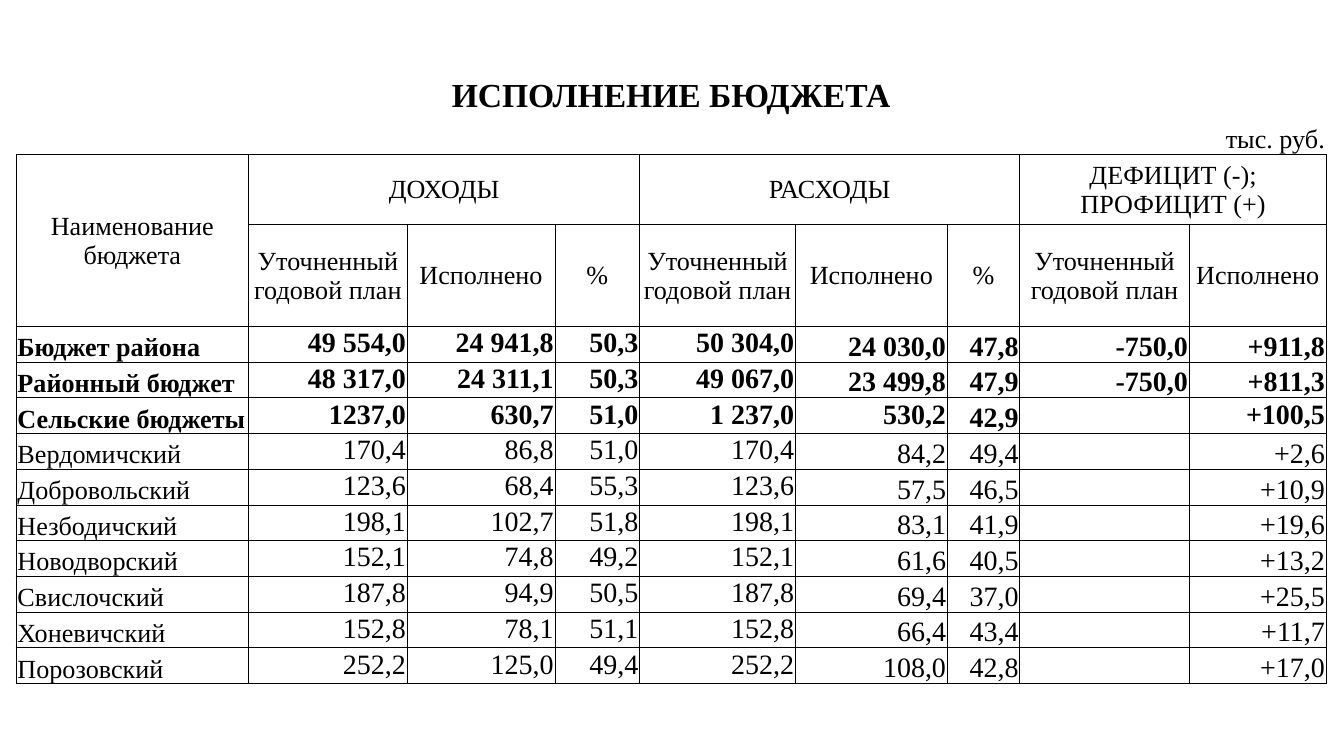
import pptx
import pptx.util
import pptx.dml.color
import pptx.enum.text
import pptx.oxml.ns
import lxml.etree

ALIGN = pptx.enum.text.PP_ALIGN
ANCHOR = pptx.enum.text.MSO_ANCHOR
COLORS = {"ink": "000000"}
FONT = "Times New Roman"
PLAIN_STYLE = "{2D5ABB26-0587-4C30-8999-92F81FD0307C}"

TITLE = "ИСПОЛНЕНИЕ БЮДЖЕТА"
UNITS = "тыс. руб."
NAME_HEADER = "Наименование бюджета"
GROUPS = [(1, 5, "ДОХОДЫ"), (6, 4, "РАСХОДЫ"), (10, 3, "ДЕФИЦИТ (-); ПРОФИЦИТ (+)")]
PLAN, DONE, SHARE = "Уточненный годовой план", "Исполнено", "%"
SUBHEADERS = [PLAN, DONE, SHARE, PLAN, DONE, SHARE, PLAN, DONE]
BUDGETS = [
    ("Бюджет района", "49 554,0", "24 941,8", "50,3", "50 304,0", "24 030,0", "47,8", "-750,0", "+911,8"),
    ("Районный бюджет", "48 317,0", "24 311,1", "50,3", "49 067,0", "23 499,8", "47,9", "-750,0", "+811,3"),
    ("Сельские бюджеты", "1237,0", "630,7", "51,0", "1 237,0", "530,2", "42,9", "", "+100,5"),
    ("Вердомичский", "170,4", "86,8", "51,0", "170,4", "84,2", "49,4", "", "+2,6"),
    ("Добровольский", "123,6", "68,4", "55,3", "123,6", "57,5", "46,5", "", "+10,9"),
    ("Незбодичский", "198,1", "102,7", "51,8", "198,1", "83,1", "41,9", "", "+19,6"),
    ("Новодворский", "152,1", "74,8", "49,2", "152,1", "61,6", "40,5", "", "+13,2"),
    ("Свислочский", "187,8", "94,9", "50,5", "187,8", "69,4", "37,0", "", "+25,5"),
    ("Хоневичский", "152,8", "78,1", "51,1", "152,8", "66,4", "43,4", "", "+11,7"),
    ("Порозовский", "252,2", "125,0", "49,4", "252,2", "108,0", "42,8", "", "+17,0"),
]
SUMMARY_COUNT = 3
RURAL_TOTAL = 2

SLIDE_WIDTH = 10
SLIDE_HEIGHT = SLIDE_WIDTH * 9 / 16
TABLE_LEFT, TABLE_TOP, TABLE_HEIGHT = 0.12, 0.54, 4.55
COLUMN_WIDTHS = [1.73, 1.01, 0.17, 0.73, 0.37, 0.63, 1.16, 0.9, 0.23, 0.54, 1.26, 0.12, 0.9]
HEADER_HEIGHTS = [0.34, 0.27, 0.52, 0.76]
BODY_HEIGHT = (TABLE_HEIGHT - sum(HEADER_HEIGHTS)) / len(BUDGETS)
UNIT_SPANS = [(2, 2), (4, 2), (8, 2), (10, 2)]
BODY_SPANS = [(0, 1), (1, 2), (3, 2), (5, 1), (6, 1), (7, 2), (9, 1), (10, 1), (11, 2)]
INSETS = {"margin_left": 0.01, "margin_top": 0.01, "margin_right": 0.01, "margin_bottom": 0}


def draw_borders(cell, sides):
    properties = cell._tc.get_or_add_tcPr()
    for side in sides:
        line = lxml.etree.SubElement(properties, pptx.oxml.ns.qn(f"a:ln{side}"), w="6350")
        fill = lxml.etree.SubElement(line, pptx.oxml.ns.qn("a:solidFill"))
        lxml.etree.SubElement(fill, pptx.oxml.ns.qn("a:srgbClr"), val=COLORS["ink"])


def prepare(cell, row):
    draw_borders(cell, "" if row == 0 else "B" if row == 1 else "LRTB")
    cell.fill.background()
    for name, inches in INSETS.items():
        setattr(cell, name, pptx.util.Inches(inches))
    para = cell.text_frame.paragraphs[0]
    lxml.etree.SubElement(para._p, pptx.oxml.ns.qn("a:endParaRPr"), sz="1400")


def write(cell, text, size=14, bold=False, align=ALIGN.CENTER, anchor=ANCHOR.MIDDLE):
    cell.vertical_anchor = anchor
    para = cell.text_frame.paragraphs[0]
    para.alignment = align
    span = para.add_run()
    span.text = text
    for name, value in {"name": FONT, "size": pptx.util.Pt(size), "bold": bold}.items():
        setattr(span.font, name, value)
    span.font.color.rgb = pptx.dml.color.RGBColor.from_string(COLORS["ink"])


def merge(table, row, column, width, height=1):
    cell = table.cell(row, column)
    if width * height > 1:
        cell.merge(table.cell(row + height - 1, column + width - 1))
    return cell


def fill_headers(table):
    write(merge(table, 0, 0, len(COLUMN_WIDTHS)), TITLE, size=18, bold=True)
    for column, width in UNIT_SPANS:
        merge(table, 1, column, width)
    write(table.cell(1, len(COLUMN_WIDTHS) - 1), UNITS, align=ALIGN.RIGHT, anchor=ANCHOR.BOTTOM)
    write(merge(table, 2, 0, 1, 2), NAME_HEADER)
    for column, width, text in GROUPS:
        write(merge(table, 2, column, width), text)
    for (column, width), text in zip(BODY_SPANS[1:], SUBHEADERS):
        write(merge(table, 3, column, width), text)


def fill_budgets(table):
    for index, budget in enumerate(BUDGETS):
        top_fields = {1, 2, 3, 4} | ({5, 8} if index == RURAL_TOTAL else set())
        for field, ((column, width), text) in enumerate(zip(BODY_SPANS, budget)):
            cell = merge(table, index + len(HEADER_HEIGHTS), column, width)
            if text:
                write(cell, text,
                      size=15 if field else 14,
                      bold=index < SUMMARY_COUNT,
                      align=ALIGN.RIGHT if field else ALIGN.LEFT,
                      anchor=ANCHOR.TOP if field in top_fields else ANCHOR.BOTTOM)


def main():
    deck = pptx.Presentation()
    deck.slide_width = pptx.util.Inches(SLIDE_WIDTH)
    deck.slide_height = pptx.util.Inches(SLIDE_HEIGHT)
    page = deck.slides.add_slide(deck.slide_layouts[6])

    heights = HEADER_HEIGHTS + [BODY_HEIGHT] * len(BUDGETS)
    place = [pptx.util.Inches(value)
             for value in (TABLE_LEFT, TABLE_TOP, sum(COLUMN_WIDTHS), TABLE_HEIGHT)]
    frame = page.shapes.add_table(len(heights), len(COLUMN_WIDTHS), *place)
    table = frame.table
    table.first_row = table.horz_banding = False
    table._tbl.tblPr.find(pptx.oxml.ns.qn("a:tableStyleId")).text = PLAIN_STYLE
    for column, width in zip(table.columns, COLUMN_WIDTHS):
        column.width = pptx.util.Inches(width)
    for row, height in zip(table.rows, heights):
        row.height = pptx.util.Inches(height)
    for row in range(len(heights)):
        for column in range(len(COLUMN_WIDTHS)):
            prepare(table.cell(row, column), row)

    fill_headers(table)
    fill_budgets(table)
    deck.save("out.pptx")


if __name__ == "__main__":
    main()
